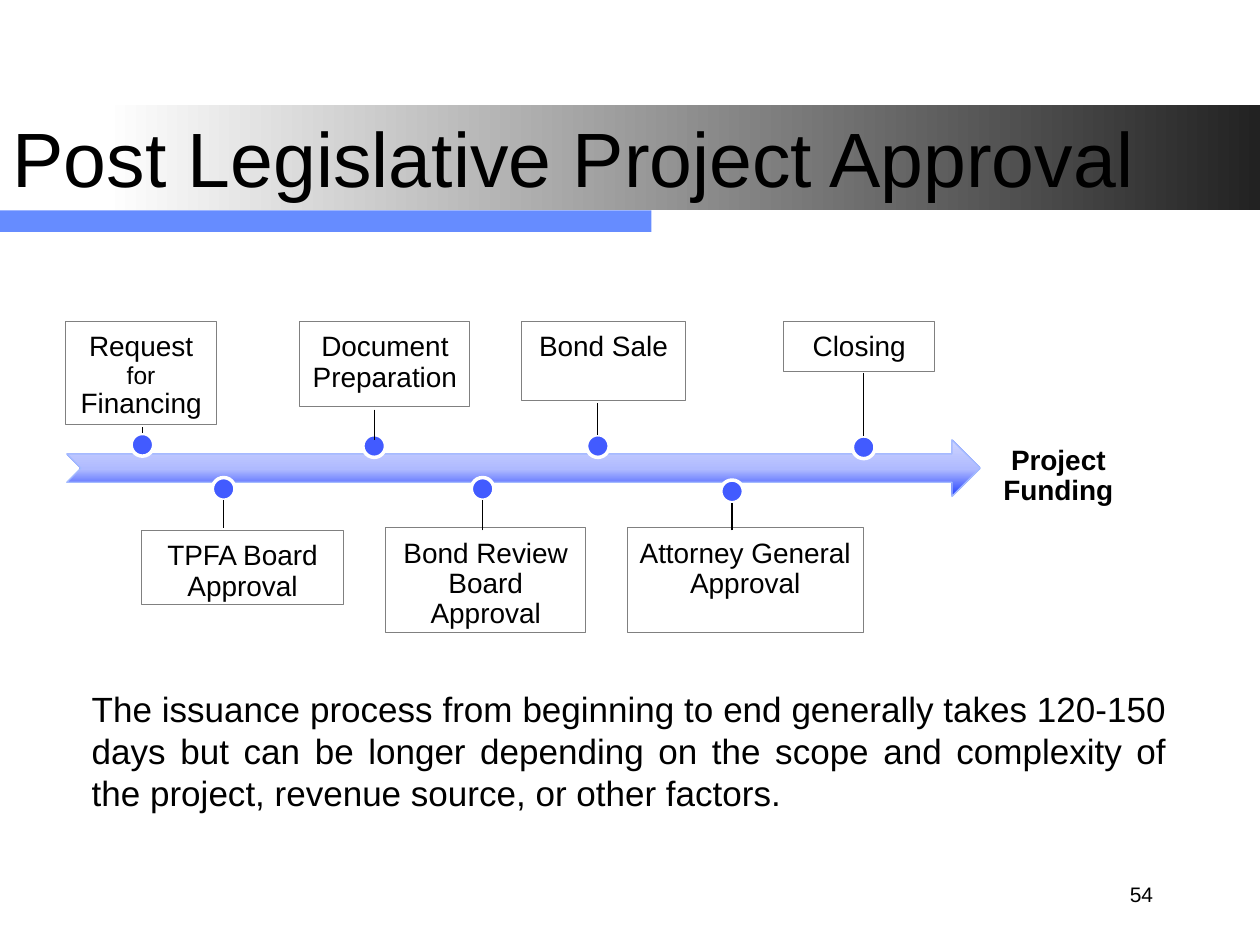
from lxml import etree
from pptx import Presentation
from pptx.dml.color import RGBColor
from pptx.enum.shapes import MSO_CONNECTOR, MSO_SHAPE
from pptx.enum.text import MSO_ANCHOR, PP_ALIGN
from pptx.oxml.ns import qn
from pptx.util import Inches, Pt

RECTANGLE = MSO_SHAPE.RECTANGLE
OVAL = MSO_SHAPE.OVAL
ARROW = MSO_SHAPE.NOTCHED_RIGHT_ARROW
STRAIGHT = MSO_CONNECTOR.STRAIGHT
LEFT, CENTER = PP_ALIGN.LEFT, PP_ALIGN.CENTER
RIGHT, JUSTIFY = PP_ALIGN.RIGHT, PP_ALIGN.JUSTIFY
TOP, MIDDLE = MSO_ANCHOR.TOP, MSO_ANCHOR.MIDDLE

FONT = "Arial"
COLORS = {
    "text": "000000", "white": "FFFFFF", "band_end": "222222",
    "bar": "668CFF", "box_line": "808080", "dot": "425BFF",
    "arrow_dark": "203EFF", "arrow_mid": "AFBAFF",
    "arrow_light": "CED4FF", "arrow_line": "A3BAFF", "shadow": "C0C0C0",
}

# The slide is a grid of 100 columns by 75 rows
WIDTH, HEIGHT = Inches(10), Inches(7.5)
COLUMN, ROW = WIDTH / 100, HEIGHT / 75
DOT = 1.8
UPPER_TOP = 25.5

# Each step: text runs, box (left, top, width, height),
# dot centre (column, row), stem (start row, end row)
STEPS = [
    ([("Request", 16), (" for ", 14), ("Financing", 16)],
     (5.2, UPPER_TOP, 12, 8.2), (11.3, 35.3), (33.9, 34.4)),
    ([("TPFA Board Approval", 16)],
     (11.2, 42.1, 16.1, 5.9), (17.75, 38.8), (41.9, 39.7)),
    ([("Document", 16), (" ", 14), ("Preparation", 16)],
     (23.8, UPPER_TOP, 13.5, 6.8), (29.7, 35.4), (32.5, 34.9)),
    ([("Bond Review Board Approval", 16)],
     (30.6, 41.9, 15.9, 8.3), (38.3, 38.8), (42.1, 39.7)),
    ([("Bond Sale", 16)],
     (41.4, UPPER_TOP, 13, 6.3), (47.45, 35.4), (32, 34.5)),
    ([("Attorney General Approval", 16)],
     (49.8, 41.9, 18.7, 8.3), (58.1, 39), (42.1, 39.9)),
    ([("Closing", 16)],
     (62.2, UPPER_TOP, 12, 4), (68.55, 35.5), (29.6, 34.6)),
]


def color(name):
    return RGBColor.from_string(COLORS[name])


def place(left, top, width, height):
    return (round(left * COLUMN), round(top * ROW),
            round(width * COLUMN), round(height * ROW))


def add_block(slide, kind, area, fill=None, line=None, weight=0.5):
    block = slide.shapes.add_shape(kind, *place(*area))
    block.shadow.inherit = False
    if fill:
        block.fill.solid()
        block.fill.fore_color.rgb = color(fill)
    else:
        block.fill.background()
    if line:
        block.line.color.rgb = color(line)
        block.line.width = Pt(weight)
    else:
        block.line.fill.background()
    return block


def set_gradient(block, stops, angle):
    block.fill.gradient()
    block.fill.gradient_angle = angle
    stop_list = block._element.spPr.find(qn("a:gradFill")).find(qn("a:gsLst"))
    for old in list(stop_list):
        stop_list.remove(old)
    for percent, name in stops:
        stop = etree.SubElement(stop_list, qn("a:gs"), pos=str(percent * 1000))
        etree.SubElement(stop, qn("a:srgbClr"), val=COLORS[name])


def write(box, runs, align, anchor=TOP, bold=False, spacing=1.0, inset=None):
    frame = box.text_frame
    frame.word_wrap = True
    frame.vertical_anchor = anchor
    if inset is not None:
        frame.margin_left = frame.margin_right = Inches(inset)
        frame.margin_top = frame.margin_bottom = Inches(inset)
    para = frame.paragraphs[0]
    para.alignment = align
    para.line_spacing = spacing
    for text, size in runs:
        span = para.add_run()
        span.text = text
        span.font.name = FONT
        span.font.size = Pt(size)
        span.font.bold = bold
        span.font.color.rgb = color("text")
    return para


def add_text(slide, area, runs, align, **style):
    box = slide.shapes.add_textbox(*place(*area))
    write(box, runs, align, **style)


def add_title(slide, text):
    title = slide.shapes.title
    title.left, title.top, title.width, title.height = place(0, 8.3, 100, 8.3)
    para = write(title, [(text, 44)], LEFT, anchor=MIDDLE)
    # Soft shadow behind the letters
    fill = para.runs[0].font._element.find(qn("a:solidFill"))
    effects = etree.Element(qn("a:effectLst"))
    shadow = etree.SubElement(effects, qn("a:outerShdw"), blurRad="38100",
                              dist="38100", dir="2700000")
    etree.SubElement(shadow, qn("a:srgbClr"), val=COLORS["shadow"])
    fill.addnext(effects)
    # Bring the title in front of its band
    slide.shapes._spTree.append(title._element)


def add_stem(slide, column, start, end):
    x = round(column * COLUMN)
    stem = slide.shapes.add_connector(
        STRAIGHT, x, round(start * ROW), x, round(end * ROW))
    stem.line.color.rgb = color("text")
    stem.line.width = Pt(0.75)
    etree.SubElement(stem._element.spPr, qn("a:effectLst"))


def add_step(slide, runs, area, dot, stem):
    box = add_block(slide, RECTANGLE, area, line="box_line")
    write(box, runs, CENTER, spacing=0.9, inset=0.09)
    column, row = dot
    add_block(slide, OVAL, (column - DOT / 2, row - DOT / 2, DOT, DOT),
              "dot", "white", 2)
    add_stem(slide, column, *stem)


def main():
    deck = Presentation()
    deck.slide_width, deck.slide_height = WIDTH, HEIGHT
    slide = deck.slides.add_slide(deck.slide_layouts[5])

    # Title band and bar
    band = add_block(slide, RECTANGLE, (8.3, 8.3, 91.7, 8.4))
    set_gradient(band, [(0, "white"), (100, "band_end")], 0)
    add_block(slide, RECTANGLE, (0, 16.7, 51.7, 1.7), "bar")
    add_title(slide, "Post Legislative Project Approval")

    # Timeline
    arrow = add_block(slide, ARROW, (5.3, 34.9, 72.5, 4.5),
                      line="arrow_line", weight=0.75)
    set_gradient(arrow, [(0, "arrow_dark"), (48, "arrow_mid"),
                         (100, "arrow_light")], 90)
    for step in STEPS:
        add_step(slide, *step)
    add_text(slide, (77.8, 34.5, 12.4, 5.3), [("Project Funding", 16)],
             CENTER, bold=True, spacing=0.9, inset=0.09)

    # Closing remark and page number
    add_text(slide, (6.3, 54.1, 87.3, 11.1), [(
        "The issuance process from beginning to end generally takes 120-150 "
        "days but can be longer depending on the scope and complexity of the "
        "project, revenue source, or other factors.", 20)], JUSTIFY)
    add_text(slide, (66, 69.2, 26.5, 3.5), [("54", 12)], RIGHT, anchor=MIDDLE)

    deck.save("out.pptx")


if __name__ == "__main__":
    main()
